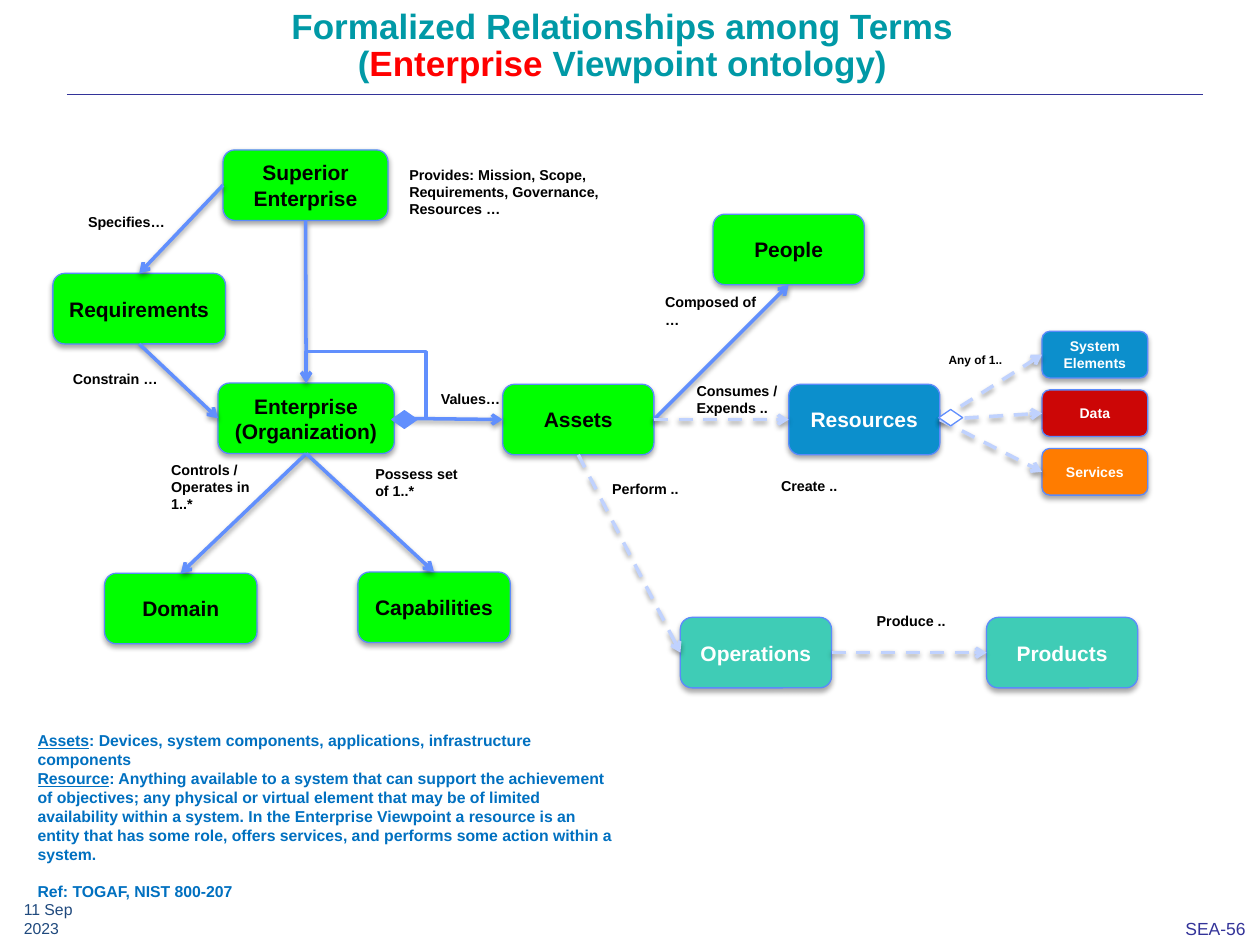
from lxml import etree
from pptx import Presentation
from pptx.dml.color import RGBColor
from pptx.enum.dml import MSO_LINE
from pptx.enum.shapes import MSO_CONNECTOR, MSO_SHAPE
from pptx.enum.text import MSO_ANCHOR, MSO_AUTO_SIZE, PP_ALIGN
from pptx.oxml import parse_xml
from pptx.oxml.ns import nsdecls, qn
from pptx.util import Inches, Pt

STRAIGHT, ELBOW = MSO_CONNECTOR.STRAIGHT, MSO_CONNECTOR.ELBOW
ROUND, DIAMOND = MSO_SHAPE.ROUNDED_RECTANGLE, MSO_SHAPE.FLOWCHART_DECISION
DASH = MSO_LINE.DASH
TOP_ANCHOR, MIDDLE = MSO_ANCHOR.TOP, MSO_ANCHOR.MIDDLE
LEFT_ALIGN, CENTER = PP_ALIGN.LEFT, PP_ALIGN.CENTER
NO_AUTOFIT = MSO_AUTO_SIZE.NONE
TOP, LEFT, BOTTOM, RIGHT = range(4)  # connection sites of a box

FONT = "Arial"
BLACK = RGBColor(0x00, 0x00, 0x00)
WHITE = RGBColor(0xFF, 0xFF, 0xFF)
TEAL = RGBColor(0x00, 0x99, 0xA6)
RED = RGBColor(0xFF, 0x00, 0x00)
INDIGO = RGBColor(0x33, 0x33, 0x99)
NAVY = RGBColor(0x1F, 0x49, 0x7D)
TEXT_BLUE = RGBColor(0x00, 0x70, 0xC0)
GREEN = RGBColor(0x00, 0xFF, 0x00)
AQUA = RGBColor(0x3F, 0xCC, 0xB6)
BLUE = RGBColor(0x0C, 0x8F, 0xCC)
DARK_RED = RGBColor(0xCC, 0x06, 0x06)
ORANGE = RGBColor(0xFF, 0x7C, 0x00)
OUTLINE = RGBColor(0x5B, 0x8A, 0xFB)
ARROW = RGBColor(0x61, 0x8F, 0xFD)
PALE_ARROW = RGBColor(0xC0, 0xD2, 0xFE)

# name: text, left, top, width, fill, text colour
MAIN_BOXES = {
    "superior": ("Superior\nEnterprise", 1.77, 1.19, 1.31, GREEN, BLACK),
    "requirements": ("Requirements", 0.42, 2.17, 1.37, GREEN, BLACK),
    "enterprise": ("Enterprise\n(Organization)", 1.73, 3.04, 1.4, GREEN, BLACK),
    "domain": ("Domain", 0.83, 4.55, 1.21, GREEN, BLACK),
    "capabilities": ("Capabilities", 2.84, 4.54, 1.21, GREEN, BLACK),
    "assets": ("Assets", 3.99, 3.05, 1.2, GREEN, BLACK),
    "people": ("People", 5.66, 1.7, 1.2, GREEN, BLACK),
    "resources": ("Resources", 6.26, 3.05, 1.2, BLUE, WHITE),
    "operations": ("Operations", 5.4, 4.9, 1.2, AQUA, WHITE),
    "products": ("Products", 7.83, 4.9, 1.2, AQUA, WHITE),
}
RESOURCE_KINDS = [("System Elements", BLUE), ("Data", DARK_RED), ("Services", ORANGE)]

SOLID_LINKS = [
    ("superior", LEFT, "requirements", TOP),
    ("superior", BOTTOM, "enterprise", TOP),
    ("requirements", BOTTOM, "enterprise", LEFT),
    ("enterprise", BOTTOM, "domain", TOP),
    ("enterprise", BOTTOM, "capabilities", TOP),
    ("enterprise", RIGHT, "assets", LEFT),
    ("assets", RIGHT, "people", BOTTOM),
]
DASHED_LINKS = [
    ("assets", RIGHT, "resources", LEFT),
    ("assets", BOTTOM, "operations", LEFT),
    ("operations", RIGHT, "products", LEFT),
] + [("resources", RIGHT, name, LEFT) for name, _ in RESOURCE_KINDS]

# text, left, top, width, height
LABELS = [
    ("Specifies…", 0.6, 1.64, 0.95, 0.24),
    ("Provides: Mission, Scope, Requirements, Governance, Resources …", 3.15, 1.27, 1.8, 0.52),
    ("Constrain …", 0.48, 2.89, 0.95, 0.24),
    ("Values…", 3.4, 3.05, 0.95, 0.24),
    ("Controls / Operates in 1..*", 1.26, 3.61, 0.91, 0.52),
    ("Possess set of 1..*", 2.88, 3.64, 0.91, 0.38),
    ("Composed of …", 5.18, 2.28, 0.95, 0.38),
    ("Consumes / Expends ..", 5.43, 2.98, 0.87, 0.38),
    ("Perform ..", 4.76, 3.76, 0.8, 0.24),
    ("Create ..", 6.1, 3.74, 0.75, 0.24),
    ("Produce ..", 6.86, 4.81, 0.8, 0.24),
]

DEFINITIONS = [
    ("Assets", ": Devices, system components, applications, infrastructure components"),
    ("Resource", ": Anything available to a system that can support the achievement of "
     "objectives; any physical or virtual element that may be of limited availability "
     "within a system. In the Enterprise Viewpoint a resource is an entity that has some "
     "role, offers services, and performs some action within a system."),
]


def add_run(p, text, *, size, color=BLACK, bold=True, underline=None):
    r = p.add_run()
    r.text = text
    f = r.font
    f.name, f.size, f.bold, f.underline = FONT, Pt(size), bold, underline
    f.color.rgb = color


def add_shadow(s, alpha, dist):
    s._element.spPr.append(parse_xml(
        f'<a:effectLst {nsdecls("a")}><a:outerShdw blurRad="{Pt(3.1)}" dist="{Pt(dist)}" '
        f'dir="5400000" rotWithShape="0"><a:srgbClr val="000000">'
        f'<a:alpha val="{alpha * 1000}"/></a:srgbClr></a:outerShdw></a:effectLst>'))


def add_text(slide, text, x, y, w, h, *, anchor=TOP_ANCHOR, wrap=True, **fmt):
    """Add a text box; an empty text leaves its first paragraph free."""
    tf = slide.shapes.add_textbox(Inches(x), Inches(y), Inches(w), Inches(h)).text_frame
    tf.word_wrap, tf.vertical_anchor = wrap, anchor
    if text:
        add_run(tf.paragraphs[0], text, **fmt)
    return tf


def add_box(slide, text, x, y, w, h, fill, color, size):
    s = slide.shapes.add_shape(ROUND, Inches(x), Inches(y), Inches(w), Inches(h))
    s.fill.solid()
    s.fill.fore_color.rgb = fill
    s.line.color.rgb, s.line.width = OUTLINE, Pt(0.75)
    add_shadow(s, 35, 1.8)
    tf = s.text_frame
    tf.word_wrap, tf.vertical_anchor = True, MIDDLE
    for i, line in enumerate(text.split("\n")):
        p = tf.add_paragraph() if i else tf.paragraphs[0]
        p.alignment = CENTER
        add_run(p, line, size=size, color=color)
    return s


def add_link(slide, start, start_site, end, end_site, *, kind=STRAIGHT, color=ARROW, dash=None):
    c = slide.shapes.add_connector(kind, 0, 0, 0, 0)
    c.begin_connect(start, start_site)
    c.end_connect(end, end_site)
    c.line.color.rgb, c.line.width = color, Pt(2)
    if dash:
        c.line.dash_style = dash
    etree.SubElement(c.line._get_or_add_ln(), qn("a:tailEnd"), type="arrow")
    if kind == STRAIGHT:
        add_shadow(c, 38, 1.6)
    else:
        etree.SubElement(c._element.spPr, qn("a:effectLst"))
    return c


def add_self_loop(slide, box):
    """Link the right side of a box to its own top, around the corner."""
    c = add_link(slide, box, RIGHT, box, TOP, kind=ELBOW)
    geom = c._element.spPr.find(qn("a:prstGeom"))
    geom.set("prst", "bentConnector4")
    guides = geom.get_or_add_avLst()
    for name, value in (("adj1", -35800), ("adj2", 188900)):
        etree.SubElement(guides, qn("a:gd"), name=name, fmla=f"val {value}")


def add_diamond(slide, x, y, w, h, fill):
    s = slide.shapes.add_shape(DIAMOND, Inches(x), Inches(y), Inches(w), Inches(h))
    s.shadow.inherit = False
    s.fill.solid()
    s.fill.fore_color.rgb = fill
    s.line.color.rgb, s.line.width = ARROW, Pt(0.75)


def add_title(slide):
    title = slide.shapes.title
    title.left, title.top, title.width, title.height = map(Inches, (0.44, 0.02, 9, 0.84))
    tf = title.text_frame
    tf.auto_size, tf.vertical_anchor = NO_AUTOFIT, TOP_ANCHOR
    p = tf.paragraphs[0]
    p.alignment, p.line_spacing = CENTER, 0.9
    add_run(p, "Formalized Relationships among Terms", size=20, color=TEAL)
    p.add_line_break()
    for text, color in (("(", TEAL), ("Enterprise", RED), (" Viewpoint ontology)", TEAL)):
        add_run(p, text, size=20, color=color)
    rule = slide.shapes.add_connector(STRAIGHT, Inches(0.53), Inches(0.75), Inches(9.55), Inches(0.75))
    rule.line.color.rgb, rule.line.width = INDIGO, Pt(0.13)
    etree.SubElement(rule._element.spPr, qn("a:effectLst"))


def add_definitions(slide):
    tf = add_text(slide, "", 0.2, 5.75, 4.8, 1.46)
    for i, (term, meaning) in enumerate(DEFINITIONS):
        p = tf.add_paragraph() if i else tf.paragraphs[0]
        add_run(p, term, size=9, color=TEXT_BLUE, underline=True)
        add_run(p, meaning, size=9, color=TEXT_BLUE)
    p = tf.add_paragraph()
    p.space_before = Pt(10.8)
    add_run(p, "Ref: TOGAF, NIST 800-207", size=9, color=TEXT_BLUE)


def main():
    prs = Presentation()
    prs.slide_width, prs.slide_height = Inches(10), Inches(7.5)
    slide = prs.slides.add_slide(prs.slide_layouts[5])
    add_title(slide)

    boxes = {name: add_box(slide, text, x, y, w, 0.56, fill, color, 12)
             for name, (text, x, y, w, fill, color) in MAIN_BOXES.items()}
    for i, (name, fill) in enumerate(RESOURCE_KINDS):
        boxes[name] = add_box(slide, name, 8.27, 2.63 + i * 0.465, 0.84, 0.37, fill, WHITE, 8)

    for start, start_site, end, end_site in SOLID_LINKS:
        add_link(slide, boxes[start], start_site, boxes[end], end_site)
    for start, start_site, end, end_site in DASHED_LINKS:
        add_link(slide, boxes[start], start_site, boxes[end], end_site, color=PALE_ARROW, dash=DASH)
    add_self_loop(slide, boxes["enterprise"])
    add_diamond(slide, 3.11, 3.26, 0.2, 0.14, ARROW)
    add_diamond(slide, 7.45, 3.25, 0.19, 0.13, WHITE)

    for label in LABELS:
        add_text(slide, *label, size=8.2)
    add_text(slide, "Any of 1..", 7.43, 2.75, 0.7, 0.21, size=6.8)
    add_definitions(slide)
    add_text(slide, "11 Sep 2023", 0.09, 7.15, 0.81, 0.28, anchor=MIDDLE, wrap=False,
             size=9, color=NAVY, bold=False)
    add_text(slide, "SEA-56", 9.31, 7.24, 0.68, 0.26, wrap=False, size=10, color=INDIGO, bold=False)
    prs.save("out.pptx")


if __name__ == "__main__":
    main()
